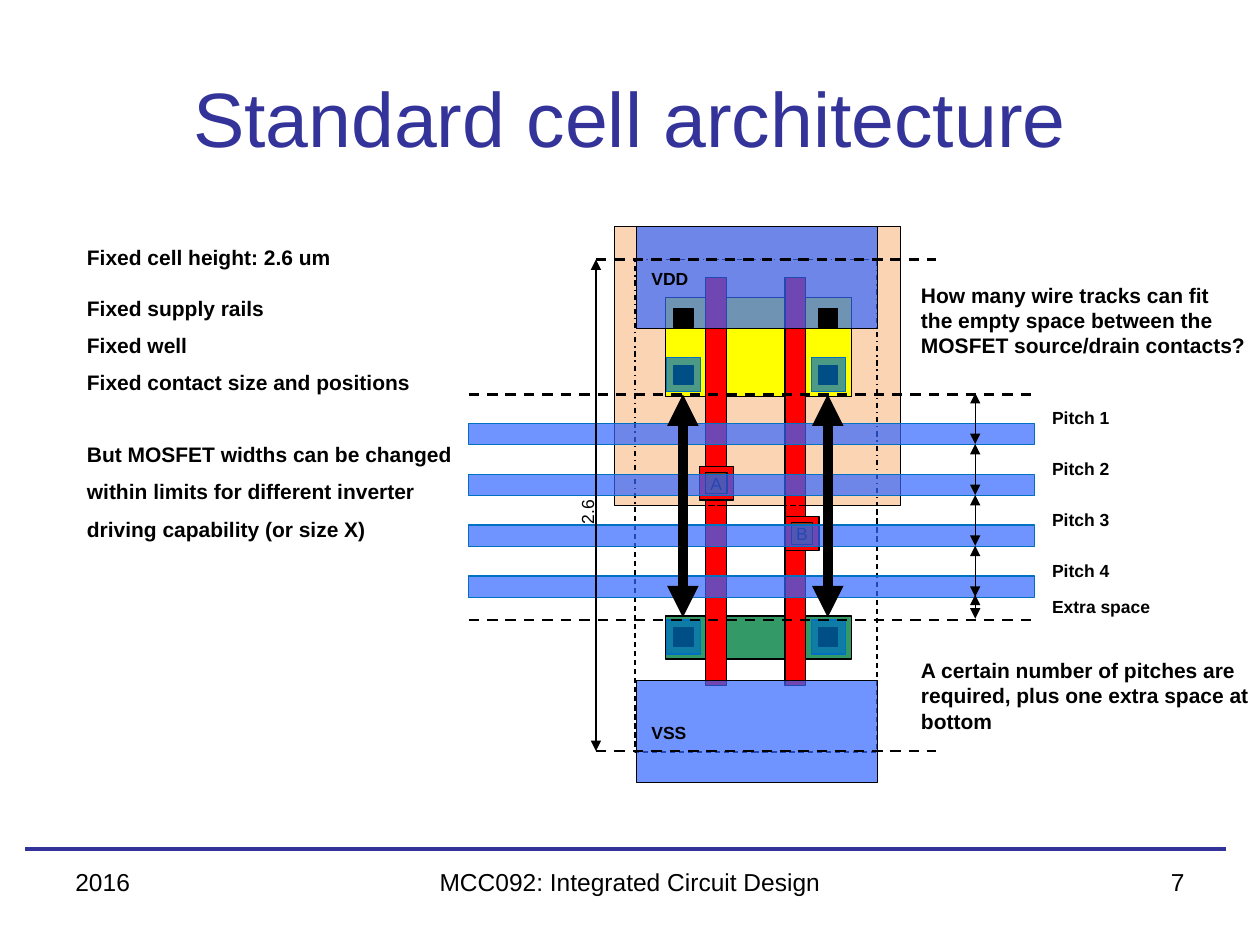
import pptx
import pptx.util
import pptx.dml.color
import pptx.enum.dml
import pptx.enum.shapes
import pptx.enum.text
import pptx.oxml
import pptx.oxml.ns

Pt = pptx.util.Pt
Dash = pptx.enum.dml.MSO_LINE
Align = pptx.enum.text.PP_ALIGN
Fit = pptx.enum.text.MSO_AUTO_SIZE
Mid = pptx.enum.text.MSO_ANCHOR.MIDDLE
Top = pptx.enum.text.MSO_ANCHOR.TOP

theme = {
    "ink": "000000", "navy": "333399", "well": "FBD4B4", "pmos": "FFFF00",
    "nmos": "339966", "gate": "FF0000", "via": "993300", "metal": "3366FF",
    "pad": "0070C0", "font": "Arial",
    "head": 44, "foot": 14, "note": 12, "tag": 10,
}

deck = pptx.Presentation()
deck.slide_width = pptx.util.Inches(10)
deck.slide_height = pptx.util.Inches(7.5)
col = deck.slide_width / 100
row = deck.slide_height / 75
slide = deck.slides.add_slide(deck.slide_layouts[1])
shapes = slide.shapes


def box(at, fill=None, edge="ink", dash=None, alpha=None):
    x, y, w, h = at
    part = shapes.add_shape(pptx.enum.shapes.MSO_SHAPE.RECTANGLE,
                            int(x * col), int(y * row), int(w * col), int(h * row))
    part.shadow.inherit = False
    part.line.color.rgb = pptx.dml.color.RGBColor.from_string(theme[edge])
    part.line.width = Pt(0.75)
    if dash:
        part.line.dash_style = dash
    if fill:
        part.fill.solid()
        part.fill.fore_color.rgb = pptx.dml.color.RGBColor.from_string(theme[fill])
    else:
        part.fill.background()
    if alpha:
        tone = part.element.spPr.find(pptx.oxml.ns.qn("a:solidFill"))[0]
        tone.append(pptx.oxml.parse_xml(
            f'<a:alpha {pptx.oxml.ns.nsdecls("a")} val="{alpha * 1000}"/>'))
    return part


def write(part, text, size, at=None, pad=(0.7, 0.4), bold=False, hue="ink",
          align=Align.LEFT, wrap=True, anchor=Top):
    if at:
        x, y, w, h = at
        place = {"left": int(x * col), "top": int(y * row),
                 "width": int(w * col), "height": int(h * row)}
        for key, val in place.items():
            setattr(part, key, val)
    frame = part.text_frame
    frame.text = text
    side, rise = int(pad[0] * col), int(pad[1] * row)
    form = {"margin_left": side, "margin_right": side, "margin_top": rise,
            "margin_bottom": rise, "word_wrap": wrap, "auto_size": Fit.NONE,
            "vertical_anchor": anchor}
    for key, val in form.items():
        setattr(frame, key, val)
    for para in frame.paragraphs:
        para.alignment = align
        face = {"name": theme["font"], "size": Pt(theme[size]), "bold": bold}
        for run in para.runs:
            for key, val in face.items():
                setattr(run.font, key, val)
            run.font.color.rgb = pptx.dml.color.RGBColor.from_string(theme[hue])


write(shapes.title, "Standard cell architecture", "head", (5, 3, 90, 12.5),
      hue="navy", align=Align.CENTER, anchor=Mid)

facts = {
    "Fixed cell height: 2.6 um": 14.8,
    "Fixed supply rails": 6.8,
    "Fixed well": 6.8,
    "Fixed contact size and positions": 26.8,
    "But MOSFET widths can be changed": 6.8,
    "within limits for different inverter": 6.8,
    "driving capability (or size X)": 0,
}
body = slide.placeholders[1]
write(body, "\n".join(facts), "note", (6.8, 19, 31.8, 22.3), (0.1, 0.4), True)
for para, gap in zip(body.text_frame.paragraphs, facts.values()):
    space = {"space_before": Pt(0), "space_after": Pt(gap), "line_spacing": 1.0}
    for key, val in space.items():
        setattr(para, key, val)
    prop = para._p.get_or_add_pPr()
    prop.set("marL", "0")
    prop.set("indent", "0")
    prop.append(pptx.oxml.parse_xml(f'<a:buNone {pptx.oxml.ns.nsdecls("a")}/>'))

box((52.8, 48.9, 14.8, 3.4), "nmos")
box((48.8, 18, 22.7, 22.1), "well")
box((52.8, 23.6, 14.8, 7.9), "pmos")
for x in (56, 62.3):
    box((x, 22, 1.65, 32.4), "gate")
box((50.4, 40.1, 19.2, 19.6), dash=Dash.DASH)
box((50.4, 20.6, 19.2, 19.5), dash=Dash.DASH_DOT)
for y in (18, 54):
    box((50.5, y, 19.15, 8.1), "metal", alpha=70)

for x in (53.5, 65):
    for y in (24.5, 29, 49.8):
        box((x, y, 1.5, 1.5), "ink")
for name, x, y in (("B", 62.3, 41), ("A", 55.5, 37)):
    box((x, y, 2.7, 2.7), "gate")
    pin = box((x + 0.5, y + 0.5, 1.7, 1.7), "via")
    write(pin, name, "tag", pad=(0, 0), align=Align.CENTER, wrap=False, anchor=Mid)
for x in (52.9, 64.4):
    for y in (28.4, 49.2):
        box((x, y, 2.7, 2.7), "pad", "pad", alpha=70)

pitch = 4.04
for step in range(4):
    box((37.2, 33.6 + step * pitch, 44.9, 1.7), "metal", "pad", alpha=70)

lines = [
    (2, 67.4, 97.3, 67.4, 2.25, "navy", None, False),
    (47.3, 20.6, 47.3, 59.6, 0.75, "ink", None, True),
    (58.1, 54, 61.6, 54, 0.75, "ink", None, False),
    (77.4, 47.2, 77.4, 49.1, 0.75, "ink", None, True),
]
lines += [(47.3, y, 74.3, y, 1.5, "ink", Dash.DASH, False) for y in (20.6, 59.6)]
lines += [(37.2, y, 82.1, y, 1.5, "ink", Dash.DASH, False) for y in (31.3, 49.2)]
lines += [(x, 31.3, x, 49, 6, "ink", None, True) for x in (54.2, 65.7)]
lines += [(77.4, 31.2 + step * pitch, 77.4, 31.2 + (step + 1) * pitch,
           0.75, "ink", None, True) for step in range(4)]
for x, y, right, low, width, hue, dash, tips in lines:
    wire = shapes.add_connector(pptx.enum.shapes.MSO_CONNECTOR.STRAIGHT,
                                int(x * col), int(y * row),
                                int(right * col), int(low * row))
    wire.line.color.rgb = pptx.dml.color.RGBColor.from_string(theme[hue])
    wire.line.width = Pt(width)
    if dash:
        wire.line.dash_style = dash
    for end in ("headEnd", "tailEnd") if tips else ():
        wire.line._get_or_add_ln().append(pptx.oxml.parse_xml(
            f'<a:{end} {pptx.oxml.ns.nsdecls("a")} type="triangle"/>'))
    wire.element.spPr.append(pptx.oxml.parse_xml(
        f'<a:effectLst {pptx.oxml.ns.nsdecls("a")}/>'))

tags = [("VDD", 51, 20.9, 6.1), ("VSS", 51, 56.9, 4.5),
        ("Extra space", 82.8, 46.9, 9.9)]
tags += [(f"Pitch {step + 1}", 82.8, 31.9 + step * pitch, 6.1) for step in range(4)]
for text, x, y, w in tags:
    write(shapes.add_textbox(0, 0, 0, 0), text, "tag", (x, y, w, 2.3),
          bold=True, wrap=False)

size = shapes.add_textbox(0, 0, 0, 0)
write(size, "2.6", "tag", (44.6, 38.7, 4, 3.9), align=Align.CENTER,
      wrap=False, anchor=Mid)
size.rotation = 270

notes = {
    "How many wire tracks can fit\nthe empty space between the MOSFET source/drain contacts?": 22,
    "A certain number of pitches are required, plus one extra space at bottom": 51.8,
}
for text, y in notes.items():
    write(shapes.add_textbox(0, 0, 0, 0), text, "note", (73, y, 26.3, 7.6),
          (0.1, 0.4), True)

feet = [("2016", 5, 23.3, Align.LEFT),
        ("MCC092: Integrated Circuit Design", 31.9, 36.2, Align.CENTER),
        ("7", 71.7, 23.3, Align.RIGHT)]
for text, x, w, align in feet:
    write(shapes.add_textbox(0, 0, 0, 0), text, "foot", (x, 68.3, w, 5.2),
          (1, 0.5), align=align)

deck.save("out.pptx")
